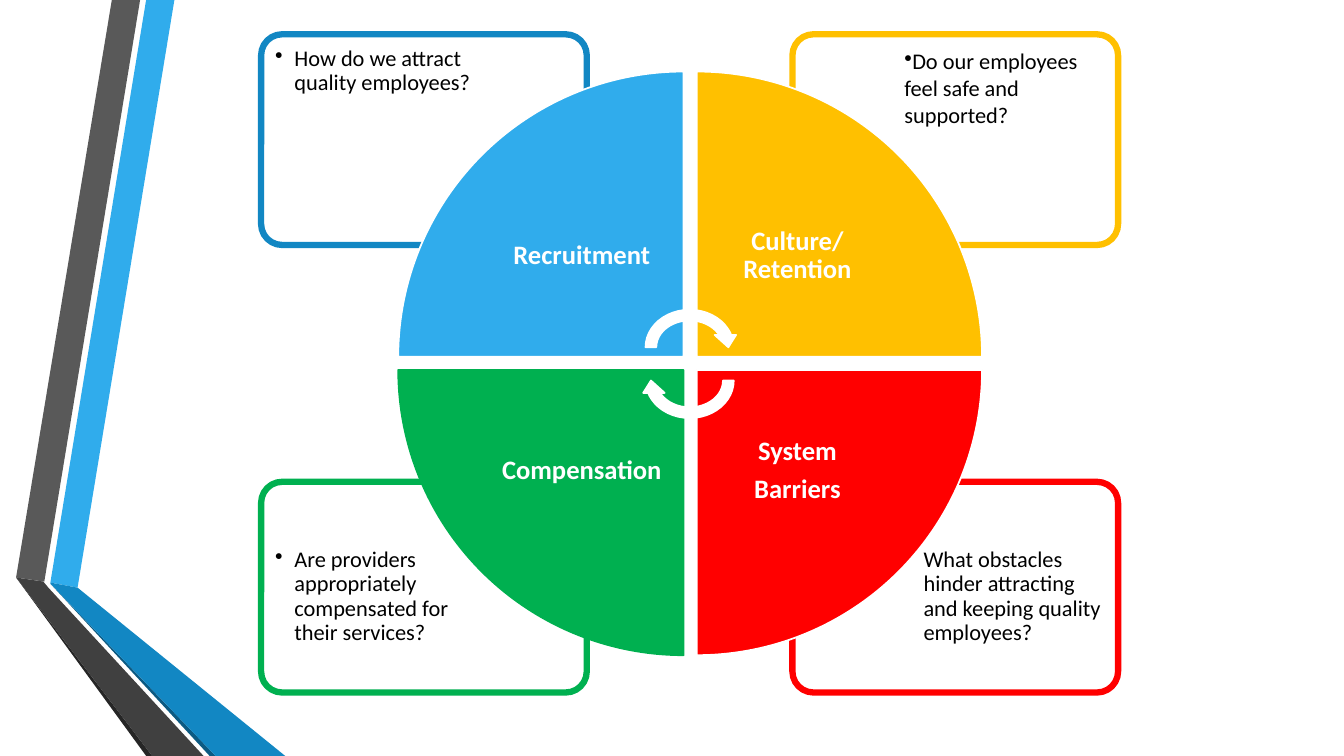
from lxml import etree
from pptx import Presentation
from pptx.dml.color import RGBColor
from pptx.enum.shapes import MSO_SHAPE
from pptx.enum.text import MSO_ANCHOR, PP_ALIGN
from pptx.oxml.ns import qn
from pptx.util import Inches, Pt

CARD = MSO_SHAPE.ROUNDED_RECTANGLE
WEDGE = MSO_SHAPE.PIE_WEDGE
ARROW = MSO_SHAPE.CIRCULAR_ARROW
MIDDLE, TOP = MSO_ANCHOR.MIDDLE, MSO_ANCHOR.TOP
CENTER, LEFT = PP_ALIGN.CENTER, PP_ALIGN.LEFT

COLORS = {
    "white": "FFFFFF", "black": "000000", "blue": "30ACEC", "deep blue": "1287C3",
    "navy": "0C5A82", "gold": "FFC000", "red": "FF0000", "green": "00B050",
    "gray": "595959", "dark gray": "404040", "charcoal": "262626",
}

RIBBONS = [
    ("blue", [(50, 578), (77, 583), (173, 0), (145, 0)]),
    ("gray", [(139, 0), (111, 0), (16, 573), (44, 577)]),
    ("charcoal", [(16, 573), (145, 750), (151, 750)]),
    ("navy", [(50, 579), (208, 750), (214, 750)]),
    ("deep blue", [(50, 578), (50, 579), (214, 750), (283, 750), (77, 583)]),
    ("dark gray", [(202, 750), (48, 583), (43, 577), (16, 573), (151, 750)]),
]

CARD_GRID = ((259, 786), (34, 478), (323, 209))
NOTE_GRID = ((264, 888), (38, 535), (217, 148))
WEDGE_GRID = ((395, 691), (71, 367), (283, 283))
LABEL_GRID = ((477, 691), (154, 367), (200, 200))

NOTES = [
    (1, 1, "red", "What obstacles hinder attracting and keeping quality employees?", 0.19),
    (0, 1, "green", "Are providers appropriately compensated for their services?", 0.19),
    (1, 0, "gold", "Do our employees feel safe and supported?", 0),
    (0, 0, "deep blue", "How do we attract quality employees?", 0.19),
]

QUADRANTS = [
    (0, 0, "blue", "white", "Recruitment"),
    (1, 0, "gold", "white", "Culture/ Retention"),
    (1, 1, "red", "white", "System\nBarriers"),
    (0, 1, "green", "green", "Compensation"),
]


class WheelSlide:
    """Draws styled elements on one slide, in grid cells of 0.01 inch."""

    cell = Inches(0.01)
    font = "Calibri"

    def __init__(self, presentation):
        self.slide = presentation.slides.add_slide(presentation.slide_layouts[6])
        self.shapes = self.slide.shapes

    def color(self, name):
        return RGBColor.from_string(COLORS[name])

    def box(self, *cells):
        return [cell * self.cell for cell in cells]

    def place(self, grid, column, row):
        lefts, tops, size = grid
        return self.box(lefts[column], tops[row], *size)

    def paint(self, shape, fill, line=None, width=1.25):
        shape.shadow.inherit = False
        shape.fill.solid()
        shape.fill.fore_color.rgb = self.color(fill)
        if line:
            shape.line.color.rgb = self.color(line)
            shape.line.width = Pt(width)
        else:
            shape.line.fill.background()

    def ribbon(self, color, points):
        builder = self.shapes.build_freeform(*points[0], scale=self.cell)
        builder.add_line_segments(points[1:], close=True)
        self.paint(builder.convert_to_shape(), color)

    def shape(self, kind, box, fill, line, width=1.25, rotation=0):
        shape = self.shapes.add_shape(kind, *box)
        shape.rotation = rotation
        self.paint(shape, fill, line, width)
        return shape

    def card(self, column, row, color):
        box = self.place(CARD_GRID, column, row)
        card = self.shape(CARD, box, "white", color, 4.5)
        card.adjustments[0] = 0.1

    def text(self, box, text, size, color, inset, anchor, align, spacing, after, bold=False):
        frame = self.shapes.add_textbox(*box).text_frame
        frame.word_wrap = True
        frame.vertical_anchor = anchor
        frame.margin_left = frame.margin_right = Inches(inset)
        frame.margin_top = frame.margin_bottom = Inches(inset)
        frame.text = text
        for paragraph in frame.paragraphs:
            paragraph.alignment = align
            paragraph.line_spacing = spacing
            paragraph.space_after = Pt(after)
            for run in paragraph.runs:
                run.font.name = self.font
                run.font.size = Pt(size)
                run.font.bold = bold
                run.font.color.rgb = self.color(color)
        return frame

    def note(self, column, row, text, indent):
        spacing, after = (0.9, 2.4) if indent else (1.0, 0)
        box = self.place(NOTE_GRID, column, row)
        frame = self.text(box, text, 16, "black", 0.09, TOP, LEFT, spacing, after)
        properties = frame.paragraphs[0]._p.get_or_add_pPr()
        properties.set("marL", str(Inches(indent)))
        properties.set("indent", str(-Inches(indent)))
        etree.SubElement(properties, qn("a:buChar")).set("char", "•")

    def quadrant(self, column, row, color, line, label):
        rotation = 270 - 90 * column if row else 90 * column
        self.shape(WEDGE, self.place(WEDGE_GRID, column, row), color, line, rotation=rotation)
        box = self.place(LABEL_GRID, column, row)
        self.text(box, label, 19, "white", 0.15, MIDDLE, CENTER, 0.9, 6.65, bold=True)

    def arrow(self, top, rotation):
        box = self.box(635, top, 98, 85)
        self.shape(ARROW, box, "white", "white", rotation=rotation)


def main():
    presentation = Presentation()
    presentation.slide_width = Inches(13.33)
    presentation.slide_height = Inches(7.5)
    wheel = WheelSlide(presentation)
    for color, points in RIBBONS:
        wheel.ribbon(color, points)
    for column, row, color, text, indent in NOTES:
        wheel.card(column, row, color)
        wheel.note(column, row, text, indent)
    for quadrant in QUADRANTS:
        wheel.quadrant(*quadrant)
    wheel.arrow(302, 0)
    wheel.arrow(335, 180)
    presentation.save("out.pptx")


if __name__ == "__main__":
    main()
